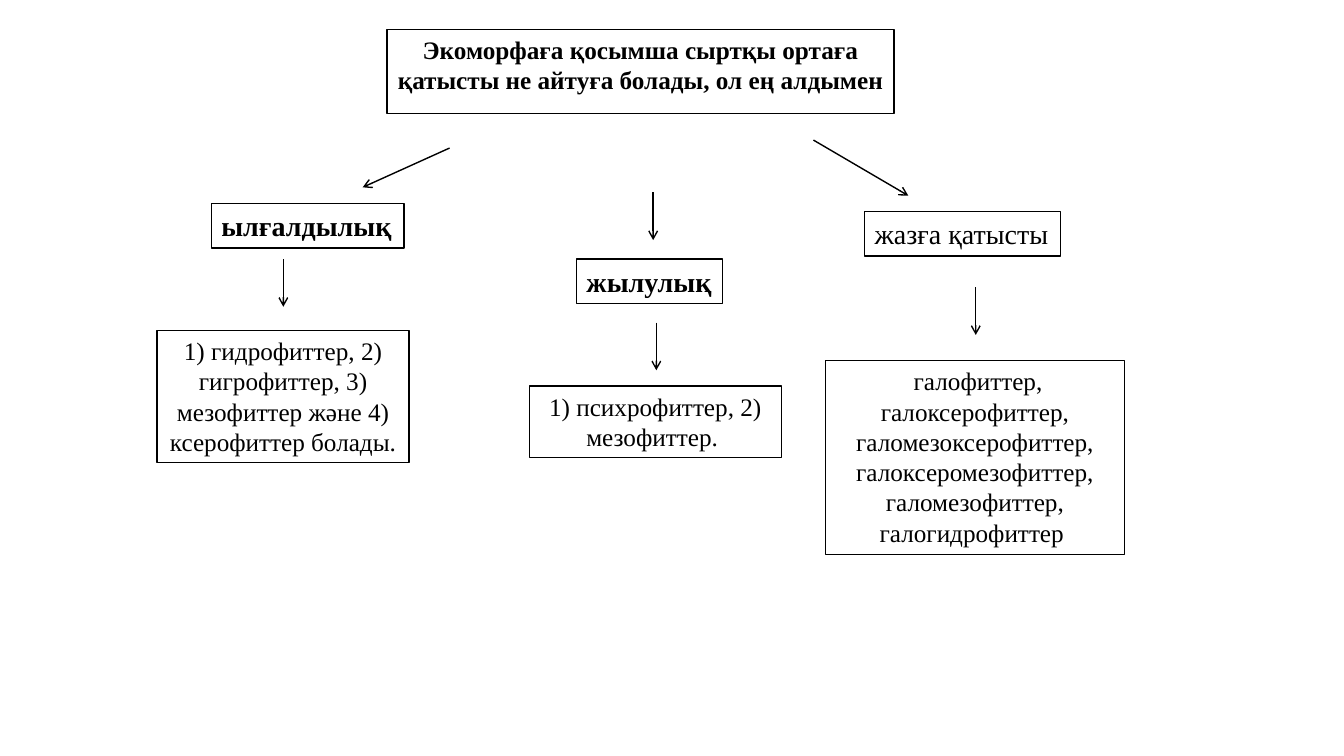
import pptx
import pptx.dml.color
import pptx.enum.shapes
import pptx.enum.text
import pptx.oxml
import pptx.oxml.ns
import pptx.util
from pptx.util import Cm

BLACK = pptx.dml.color.RGBColor(0, 0, 0)
WHITE = pptx.dml.color.RGBColor(255, 255, 255)
FONT = "Times New Roman"
LABEL_HEIGHT = 1.12
DOWN_ARROW_LENGTH = 1.2

TITLE = "Экоморфаға қосымша сыртқы ортаға қатысты не айтуға болады, ол ең алдымен "

# Text, left, top, width, bold
FACTORS = [
    ("ылғалдылық", 5.33, 5.13, 4.85, True),
    ("жылулық", 14.53, 6.53, 3.68, True),
    ("жазға қатысты", 21.79, 5.33, 4.93, False),
]

# Text, left, top, width, height
PLANT_GROUPS = [
    ("1) гидрофиттер, 2) гигрофиттер, 3) мезофиттер және 4) ксерофиттер болады. ",
     3.96, 8.33, 6.35, 3.33),
    ("1) психрофиттер, 2) мезофиттер. ", 13.34, 9.73, 6.35, 1.8),
    (" галофиттер, галоксерофиттер, галомезоксерофиттер, галоксеромезофиттер, "
     "галомезофиттер, галогидрофиттер ", 20.8, 9.09, 7.54, 4.88),
]

# Start x, start y, end x, end y
SLANTED_ARROWS = [(11.33, 3.73, 9.14, 4.72), (20.5, 3.53, 22.89, 4.93)]
# x, start y
DOWN_ARROWS = [(16.46, 4.85), (7.14, 6.53), (16.54, 8.13), (24.59, 7.24)]


def format_box(box, text, left, top, width, height, size, bold=False, label=False):
    """Place and style a framed box; a label is one unwrapped, left-aligned line."""
    box.left, box.top = Cm(left), Cm(top)
    box.width, box.height = Cm(width), Cm(height)
    box.fill.solid()
    box.fill.fore_color.rgb = WHITE
    box.line.color.rgb = BLACK
    box.line.width = pptx.util.Pt(1)

    frame = box.text_frame
    frame.text = text
    frame.word_wrap = not label
    frame.auto_size = pptx.enum.text.MSO_AUTO_SIZE.SHAPE_TO_FIT_TEXT
    frame.vertical_anchor = pptx.enum.text.MSO_ANCHOR.TOP
    para = frame.paragraphs[0]
    align = pptx.enum.text.PP_ALIGN
    para.alignment = align.LEFT if label else align.CENTER
    font = para.runs[0].font
    font.name = FONT
    font.size = pptx.util.Pt(size)
    font.bold = bold
    font.color.rgb = BLACK


def add_box(page, text, left, top, width, height, size, **style):
    box = page.shapes.add_textbox(0, 0, 0, 0)
    format_box(box, text, left, top, width, height, size, **style)


def add_arrow(page, start_x, start_y, end_x, end_y):
    arrow = page.shapes.add_connector(
        pptx.enum.shapes.MSO_CONNECTOR.STRAIGHT,
        Cm(start_x), Cm(start_y), Cm(end_x), Cm(end_y))
    arrow.line.color.rgb = BLACK
    arrow.line.width = pptx.util.Pt(1)
    namespace = pptx.oxml.ns.nsdecls("a")
    arrow.line._get_or_add_ln().append(
        pptx.oxml.parse_xml(f'<a:tailEnd {namespace} type="arrow"/>'))
    arrow._element.spPr.append(pptx.oxml.parse_xml(f"<a:effectLst {namespace}/>"))


def main():
    deck = pptx.Presentation()
    deck.slide_width, deck.slide_height = Cm(33.87), Cm(19.05)
    page = deck.slides.add_slide(deck.slide_layouts.get_by_name("Title Only"))

    format_box(page.shapes.title, TITLE, 9.75, 0.74, 12.78, 1.8, 18, bold=True)
    for text, left, top, width, bold in FACTORS:
        add_box(page, text, left, top, width, LABEL_HEIGHT, 20, bold=bold, label=True)
    for text, left, top, width, height in PLANT_GROUPS:
        add_box(page, text, left, top, width, height, 18)
    for ends in SLANTED_ARROWS:
        add_arrow(page, *ends)
    for x, top in DOWN_ARROWS:
        add_arrow(page, x, top, x, top + DOWN_ARROW_LENGTH)

    deck.save("out.pptx")


if __name__ == "__main__":
    main()
